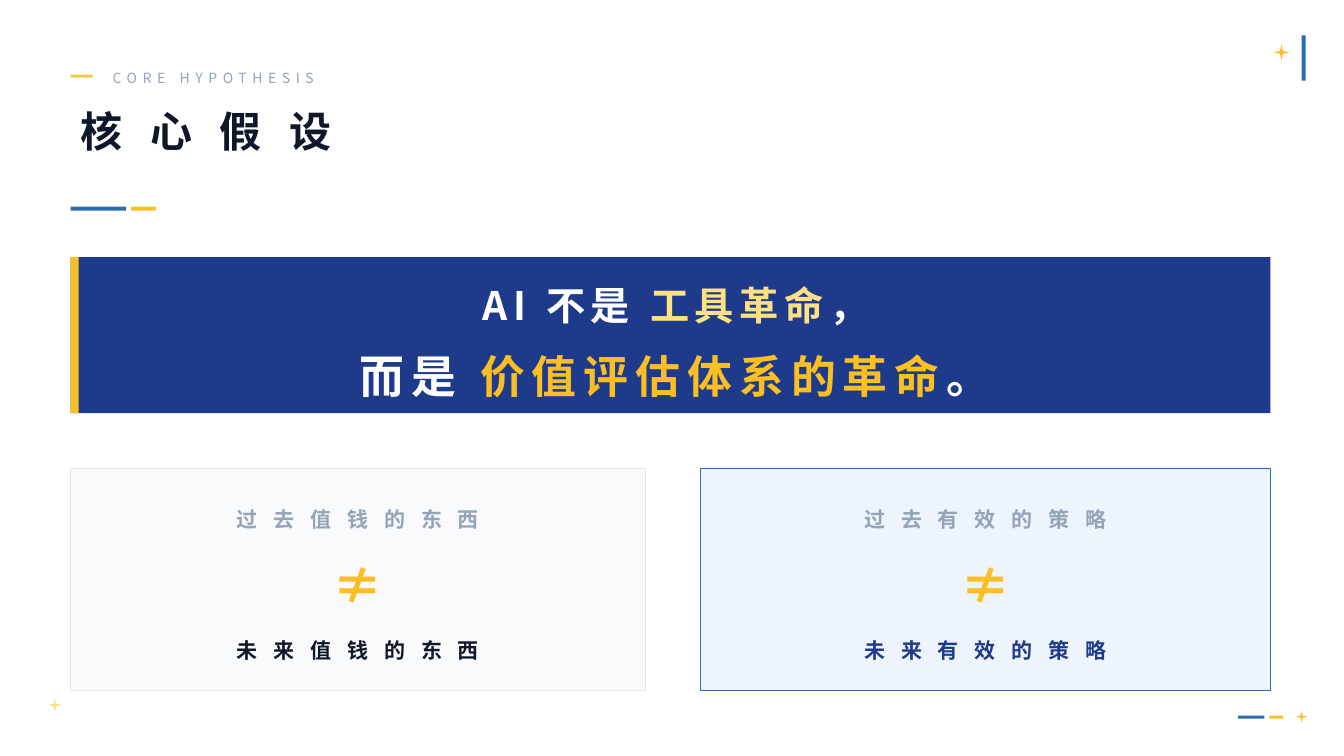
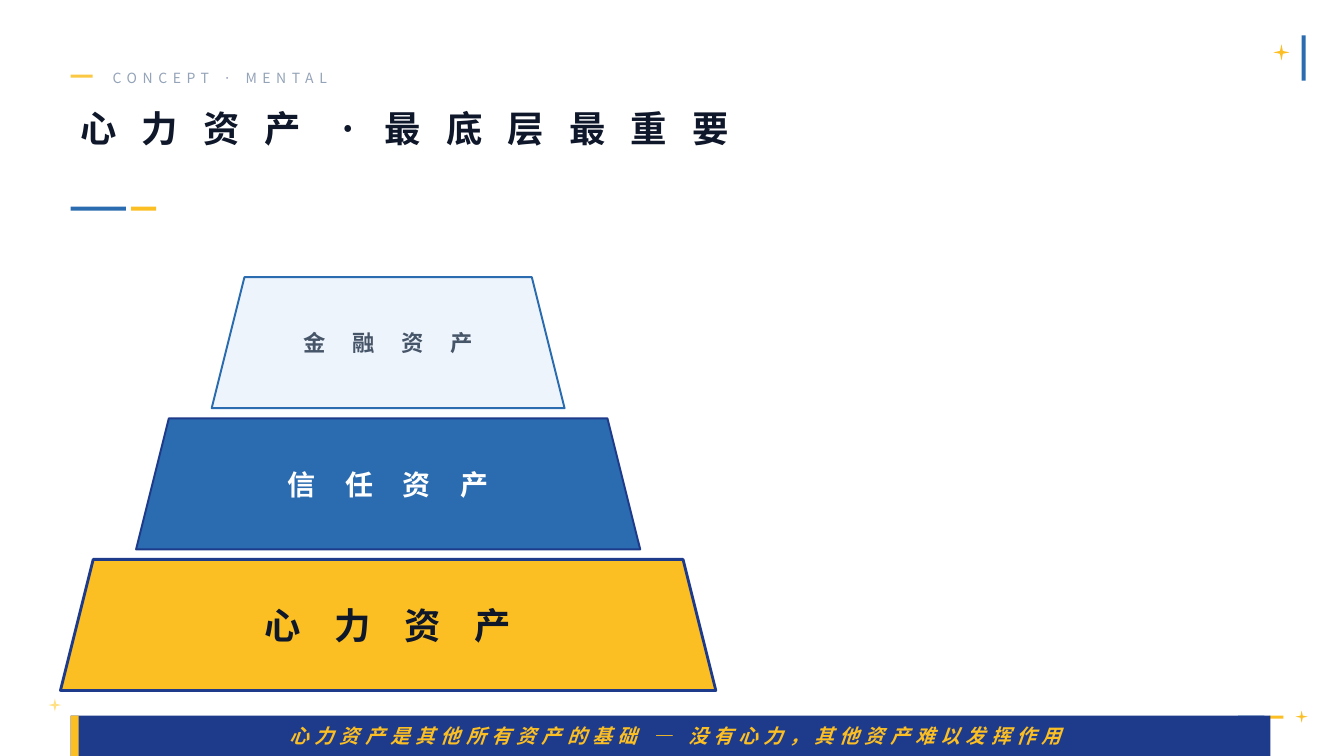
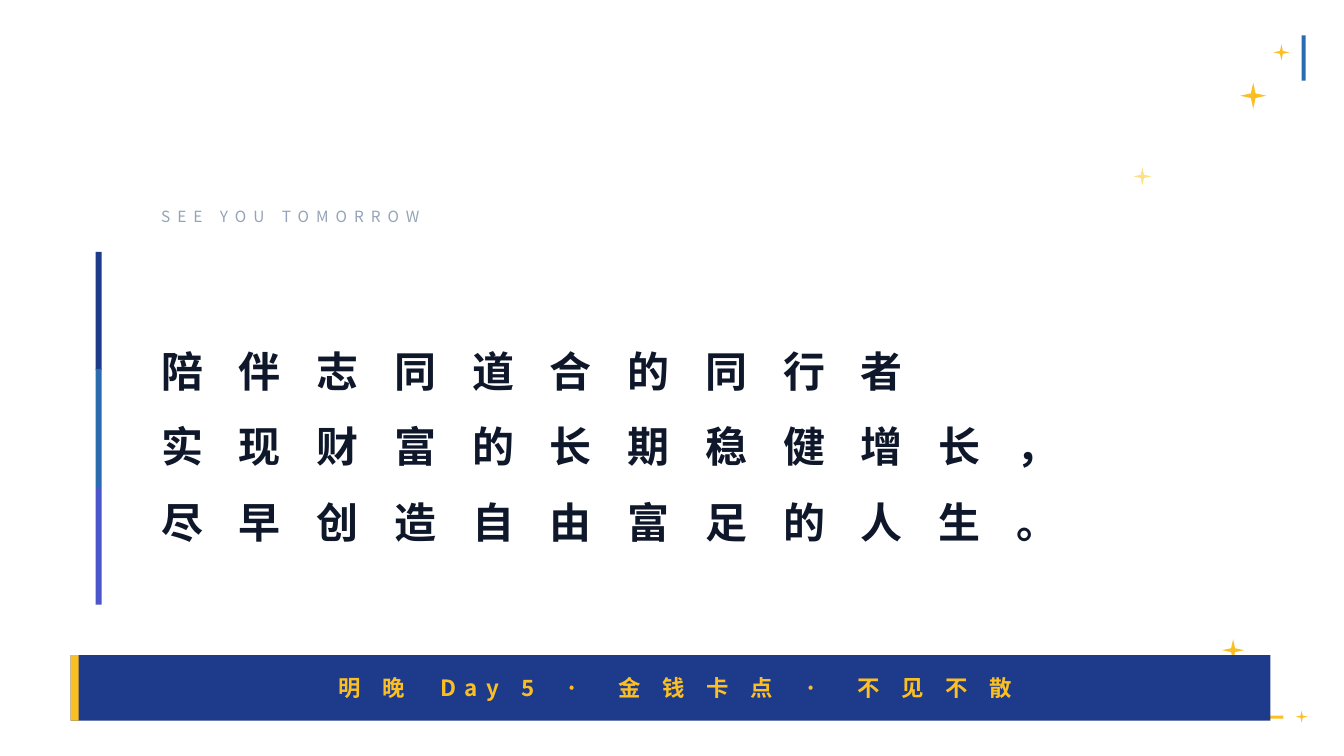
"""Build three slides on hypothesis, mental assets and a closing invitation."""
from lxml.etree import SubElement
from pptx import Presentation
from pptx.dml.color import RGBColor
from pptx.enum.shapes import MSO_SHAPE
from pptx.enum.text import MSO_ANCHOR, PP_ALIGN
from pptx.oxml.ns import qn
from pptx.util import Pt

PX = 9144
FONT = "Noto Sans CJK JP"
WHITE = RGBColor(0xFF, 0xFF, 0xFF)
INK = RGBColor(0x0F, 0x17, 0x2A)
SLATE = RGBColor(0x47, 0x55, 0x69)
GREY = RGBColor(0x94, 0xA3, 0xB8)
MIST = RGBColor(0xE2, 0xE8, 0xF0)
SNOW = RGBColor(0xF8, 0xFA, 0xFC)
ICE = RGBColor(0xEE, 0xF4, 0xFB)
NAVY = RGBColor(0x1E, 0x3A, 0x8A)
BLUE = RGBColor(0x2B, 0x6C, 0xB0)
VIOLET = RGBColor(0x4A, 0x56, 0xC9)
GOLD = RGBColor(0xFB, 0xBF, 0x24)
CREAM = RGBColor(0xFF, 0xE0, 0x82)
RECT, STAR, TRAP = MSO_SHAPE.RECTANGLE, MSO_SHAPE.STAR_4_POINT, MSO_SHAPE.TRAPEZOID
LEFT, MID = PP_ALIGN.LEFT, PP_ALIGN.CENTER


def draw(slide, kind, at, fill, edge=None, thick=0):
    shape = slide.shapes.add_shape(kind, *[n * PX for n in at])
    shape.shadow.inherit = False
    shape.fill.solid()
    shape.fill.fore_color.rgb = fill
    if edge is None:
        shape.line.fill.background()
    else:
        shape.line.color.rgb = edge
        shape.line.width = Pt(thick)
    return shape


def write(slide, at, lines, size, tone, gap=0, align=MID, anchor=MSO_ANCHOR.MIDDLE,
          lead=None, bold=True, italic=None):
    frame = slide.shapes.add_textbox(*[n * PX for n in at]).text_frame
    frame.word_wrap = True
    frame.vertical_anchor = anchor
    for row, line in enumerate(lines):
        para = frame.add_paragraph() if row else frame.paragraphs[0]
        para.alignment = align
        if lead:
            para.line_spacing = lead
        for words, hue, space in line:
            run = para.add_run()
            run.text = words
            run.font.color.rgb = hue or tone
            style = {"name": FONT, "size": Pt(size), "bold": bold, "italic": italic}
            for key, value in style.items():
                setattr(run.font, key, value)
            props = run.font._element
            props.set("spc", str(round(100 * (space or gap))))
            SubElement(props, qn("a:ea")).set("typeface", FONT)


deck = Presentation()
deck.slide_width, deck.slide_height = 1333 * PX, 750 * PX
core, mental, close = slides = [deck.slides.add_slide(deck.slide_layouts[6]) for _ in range(3)]

for slide in slides:
    draw(slide, RECT, (1291, 35, 4, 45), BLUE)
    draw(slide, STAR, (1263, 44, 16, 16), GOLD)
    draw(slide, RECT, (1259, 710, 14, 3), GOLD)
    draw(slide, STAR, (1285, 705, 12, 12), GOLD)

heads = [
    (core, "CORE HYPOTHESIS", 30, 6.5, [("核 心 假 设", None, None)]),
    (mental, "CONCEPT · MENTAL", 26, 6,
     [("心 力 资 产", None, None), (" ", None, 14), ("· 最 底 层 最 重 要", None, None)]),
]
for slide, label, size, gap, title in heads:
    draw(slide, RECT, (1228, 710, 26, 3), BLUE)
    draw(slide, STAR, (48, 693, 13, 13), CREAM)
    dash = draw(slide, RECT, (70, 74, 22, 3), GOLD)
    tint = dash.fill._xPr.find(".//" + qn("a:srgbClr"))
    SubElement(tint, qn("a:alpha")).set("val", "85000")
    write(slide, (102, 62, 800, 30), [[(label, None, None)]], 10, GREY, 4, LEFT, bold=None)
    write(slide, (70, 100, 1200, 100), [title], size, INK, gap, LEFT, MSO_ANCHOR.TOP)
    draw(slide, RECT, (70, 205, 55, 4), BLUE)
    draw(slide, RECT, (130, 205, 25, 4), GOLD)

cards = [
    (70, 570, "过 去 值 钱 的 东 西", "未 来 值 钱 的 东 西", SNOW, MIST, INK),
    (695, 565, "过 去 有 效 的 策 略", "未 来 有 效 的 策 略", ICE, BLUE, NAVY),
]
for x, wide, past, future, fill, edge, tone in cards:
    draw(core, RECT, (x, 465, wide, 220), fill, edge, 0.5)
    write(core, (x, 490, wide, 50), [[(past, None, None)]], 15, GREY, 4)
    write(core, (x, 550, wide, 60), [[("≠", None, None)]], 36, GOLD)
    write(core, (x, 620, wide, 50), [[(future, None, None)]], 15, tone, 4)

tiers = [
    (350, "金 融 资 产", 16, 7.8, SLATE, ICE, BLUE, 1.4),
    (500, "信 任 资 产", 20, 8.3, WHITE, BLUE, NAVY, 1.4),
    (650, "心 力 资 产", 26, 9, INK, GOLD, NAVY, 2),
]
for row, (wide, name, size, gap, tone, fill, edge, thick) in enumerate(tiers):
    at = (385 - wide // 2, 275 + 140 * row, wide, 130)
    draw(mental, TRAP, at, fill, edge, thick)
    write(mental, at, [[(name, None, None)]], size, tone, gap)

for row, fill in enumerate((NAVY, BLUE, VIOLET)):
    draw(close, RECT, (95, 250 + 350 * row // 3, 6, 117), fill)
for x, y, size, fill in ((1230, 82, 26, GOLD), (1124, 166, 18, CREAM), (1212, 634, 22, GOLD)):
    draw(close, STAR, (x, y, size, size), fill)
write(close, (150, 200, 1100, 30), [[("SEE YOU TOMORROW", None, None)]], 11, GREY, 5, LEFT,
      bold=None)
vows = ("陪 伴 志 同 道 合 的 同 行 者", "实 现 财 富 的 长 期 稳 健 增 长 ，",
        "尽 早 创 造 自 由 富 足 的 人 生 。")
write(close, (150, 255, 1080, 350), [[(vow, None, None)] for vow in vows], 30, INK, 9.4, LEFT,
      lead=1.5)

for slide, y, tall in ((core, 255, 155), (mental, 710, 40), (close, 650, 65)):
    draw(slide, RECT, (70, y, 1190, tall), NAVY)
    draw(slide, RECT, (70, y, 8, tall), GOLD)

claims = [
    (270, 28, 4, [("AI 不是 ", None, None), ("工具革命", CREAM, None), ("，", None, None)]),
    (340, 32, 5, [("而是 ", None, None), ("价值评估体系的革命", GOLD, None), ("。", None, None)]),
]
for y, size, gap, line in claims:
    write(core, (95, y, 1150, 65), [line], size, WHITE, gap)
motto = "心力资产是其他所有资产的基础 — 没有心力，其他资产难以发挥作用"
write(mental, (95, 710, 1150, 40), [[(motto, None, None)]], 14, GOLD, 4, italic=True)
dot = (" · ", None, 12.4)
invite = [("明 晚", None, None), (" ", None, 15.6), ("Day 5", None, None), dot,
          ("金 钱 卡 点", None, None), dot, ("不 见 不 散", None, None)]
write(close, (95, 650, 1150, 65), [invite], 16, GOLD, 6)

deck.save("out.pptx")
